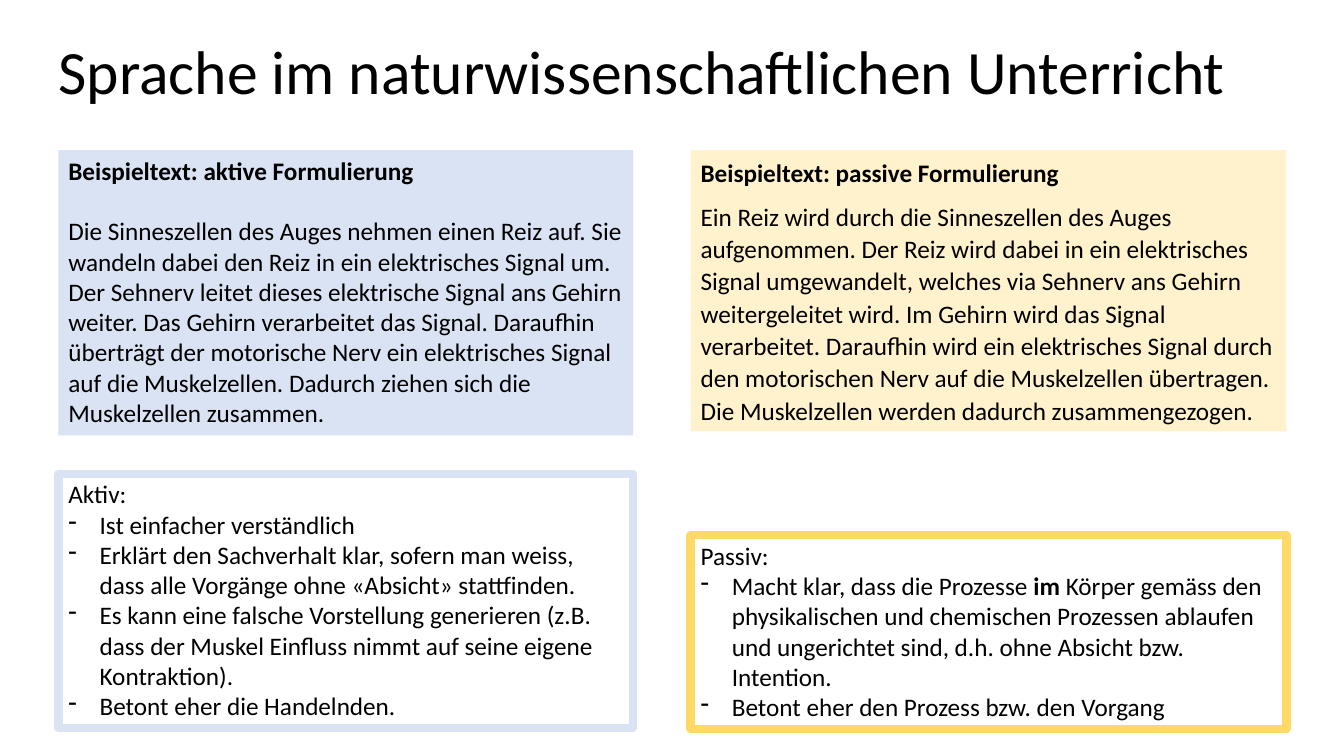
from lxml import etree
from pptx import Presentation
from pptx import util as u
from pptx.dml.color import RGBColor
from pptx.enum import text
from pptx.oxml.ns import qn

FONT = "Calibri"
TITLE = "Sprache im naturwissenschaftlichen Unterricht"
COLUMNS = [
    {
        "left": 0.58, "width": 5.7, "fill": "DAE3F3", "border": "DAE3F3",
        "example_height": 2.83, "notes_top": 4.7, "notes_height": 2.52,
        "spacing": 1.0, "after": (21.6, 0),
        "example": [
            "Beispieltext: aktive Formulierung",
            "Die Sinneszellen des Auges nehmen einen Reiz auf. Sie wandeln dabei den Reiz "
            "in ein elektrisches Signal um. Der Sehnerv leitet dieses elektrische Signal "
            "ans Gehirn weiter. Das Gehirn verarbeitet das Signal. Daraufhin überträgt der "
            "motorische Nerv ein elektrisches Signal auf die Muskelzellen. Dadurch ziehen "
            "sich die Muskelzellen zusammen.",
        ],
        "heading": "Aktiv:",
        "points": [
            ["Ist einfacher verständlich"],
            ["Erklärt den Sachverhalt klar, sofern man weiss, dass alle Vorgänge ohne "
             "«Absicht» stattfinden."],
            ["Es kann eine falsche Vorstellung generieren (z.B. dass der Muskel Einfluss "
             "nimmt auf seine eigene Kontraktion)."],
            ["Betont eher die Handelnden."],
        ],
    },
    {
        "left": 6.85, "width": 5.91, "fill": "FFF2CC", "border": "FFD966",
        "example_height": 2.79, "notes_top": 5.31, "notes_height": 1.92,
        "spacing": 1.07, "after": (8, 8),
        "example": [
            "Beispieltext: passive Formulierung",
            "Ein Reiz wird durch die Sinneszellen des Auges aufgenommen. Der Reiz wird dabei "
            "in ein elektrisches Signal umgewandelt, welches via Sehnerv ans Gehirn "
            "weitergeleitet wird. Im Gehirn wird das Signal verarbeitet. Daraufhin wird ein "
            "elektrisches Signal durch den motorischen Nerv auf die Muskelzellen übertragen. "
            "Die Muskelzellen werden dadurch zusammengezogen.",
        ],
        "heading": "Passiv:",
        "points": [
            ["Macht klar, dass die Prozesse ", "im",
             " Körper gemäss den physikalischen und chemischen Prozessen ablaufen und "
             "ungerichtet sind, d.h. ohne Absicht bzw. Intention."],
            ["Betont eher den Prozess bzw. den Vorgang"],
        ],
    },
]
EXAMPLE_TOP = 1.49
INDENT = u.Inches(0.31)


def color(value):
    return RGBColor.from_string(value)


def style(para, size=18, bold=False):
    para.font.name = FONT
    para.font.size = u.Pt(size)
    para.font.bold = bold
    para.font.color.rgb = color("000000")


def add_box(page, left, top, width, height):
    box = page.shapes.add_textbox(*map(u.Inches, (left, top, width, height)))
    box.text_frame.word_wrap = True
    box.text_frame.auto_size = text.MSO_AUTO_SIZE.SHAPE_TO_FIT_TEXT
    return box


def add_bullet(para):
    properties = para._p.get_or_add_pPr()
    properties.set("marL", str(INDENT))
    properties.set("indent", str(-INDENT))
    etree.SubElement(properties, qn("a:buChar")).set("char", "-")


def add_example(page, column):
    box = add_box(page, column["left"], EXAMPLE_TOP, column["width"], column["example_height"])
    box.fill.solid()
    box.fill.fore_color.rgb = color(column["fill"])
    frame = box.text_frame
    frame.text = "\n".join(column["example"])
    for index, para in enumerate(frame.paragraphs):
        para.line_spacing = column["spacing"]
        para.space_after = u.Pt(column["after"][index])
        style(para, bold=index == 0)


def add_notes(page, column):
    box = add_box(page, column["left"], column["notes_top"], column["width"], column["notes_height"])
    box.line.color.rgb = color(column["border"])
    box.line.width = u.Pt(6)
    frame = box.text_frame
    frame.text = column["heading"]
    style(frame.paragraphs[0])
    for point in column["points"]:
        para = frame.add_paragraph()
        add_bullet(para)
        style(para)
        for index, words in enumerate(point):
            span = para.add_run()
            span.text = words
            if index == 1:
                span.font.bold = True


def add_title(page):
    title = page.shapes.title
    title.left, title.top, title.width, title.height = map(u.Inches, (0.48, 0.28, 11.95, 0.91))
    title.text_frame.text = TITLE
    title.text_frame.vertical_anchor = text.MSO_ANCHOR.MIDDLE
    para = title.text_frame.paragraphs[0]
    para.alignment = text.PP_ALIGN.LEFT
    para.line_spacing = 0.9
    style(para, 44)


def main():
    deck = Presentation()
    deck.slide_width, deck.slide_height = u.Inches(13.33), u.Inches(7.5)
    page = deck.slides.add_slide(deck.slide_layouts[5])
    add_title(page)
    for column in COLUMNS:
        add_example(page, column)
        add_notes(page, column)
    deck.save("out.pptx")


if __name__ == "__main__":
    main()
